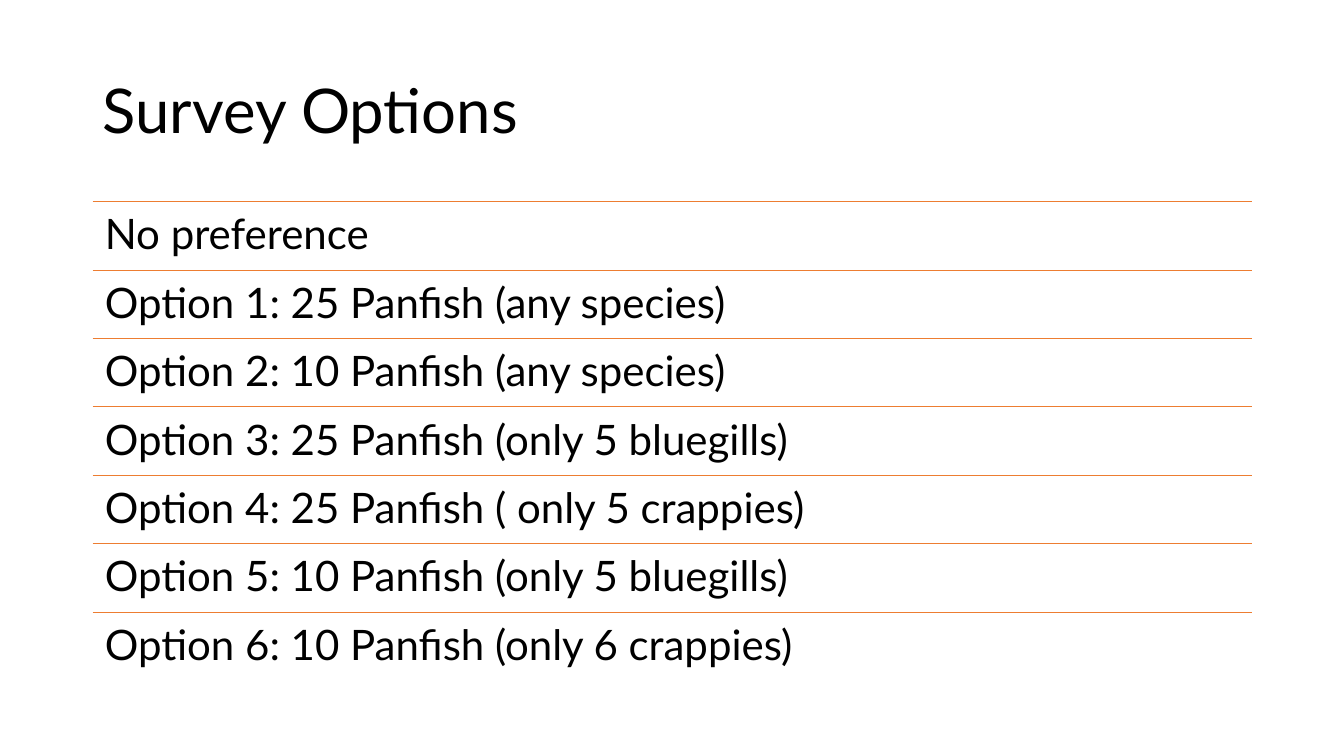
from lxml.etree import SubElement
from pptx import Presentation
from pptx.dml.color import RGBColor as RGB
from pptx.enum.shapes import MSO_CONNECTOR as Link
from pptx.enum.text import MSO_ANCHOR as Anchor
from pptx.oxml.ns import qn
from pptx.util import Inches, Pt

COLORS = {"text": "000000", "rule": "ED7D31", "shade": "000000"}
OPTIONS = [
    "No preference",
    "Option 1: 25 Panfish (any species)",
    "Option 2: 10 Panfish (any species)",
    "Option 3: 25 Panfish (only 5 bluegills)",
    "Option 4: 25 Panfish ( only 5 crappies)",
    "Option 5: 10 Panfish (only 5 bluegills)",
    "Option 6: 10 Panfish (only 6 crappies)",
]


class Sheet:
    font = "Lato"
    left, width = 0.92, 11.5
    top, pitch = 2, 4.75 / len(OPTIONS)

    def __init__(self, deck):
        self.slide = deck.slides.add_slide(deck.slide_layouts[6])

    def row(self, index):
        return self.top + index * self.pitch

    def text(self, words, top, height, size, pads, anchor):
        box = self.slide.shapes.add_textbox(
            *map(Inches, (self.left, top, self.width, height)))
        frame = box.text_frame
        frame.word_wrap = True
        frame.vertical_anchor = anchor
        frame.margin_left = frame.margin_right = Inches(pads[0])
        frame.margin_top = frame.margin_bottom = Inches(pads[1])
        frame.text = words
        para = frame.paragraphs[0]
        para.line_spacing = 0.9
        for run in para.runs:
            run.font.name = self.font
            run.font.size = Pt(size)
            run.font.color.rgb = RGB.from_string(COLORS["text"])

    def title(self, words):
        self.text(words, 0.4, 1.45, 44, (0.1, 0.05), Anchor.MIDDLE)

    def rule(self, index):
        y = self.row(index)
        line = self.slide.shapes.add_connector(
            Link.STRAIGHT, *map(Inches, (self.left, y, self.left + self.width, y)))
        line.line.color.rgb = RGB.from_string(COLORS["rule"])
        line.line.width = Pt(0.5)
        effects = SubElement(line._element.spPr, qn("a:effectLst"))
        shade = SubElement(effects, qn("a:outerShdw"), blurRad=str(Pt(4.5)),
                           dist=str(Pt(1.5)), dir="5400000", algn="ctr",
                           rotWithShape="0")
        color = SubElement(shade, qn("a:srgbClr"), val=COLORS["shade"])
        SubElement(color, qn("a:alpha"), val="63000")

    def option(self, index, words):
        self.rule(index)
        self.text(words, self.row(index), self.pitch, 30, (0.12, 0.12), Anchor.TOP)


def main():
    deck = Presentation()
    deck.slide_width, deck.slide_height = Inches(13.33), Inches(7.5)
    sheet = Sheet(deck)
    sheet.title("Survey Options")
    for index, words in enumerate(OPTIONS):
        sheet.option(index, words)
    deck.save("out.pptx")


if __name__ == "__main__":
    main()
